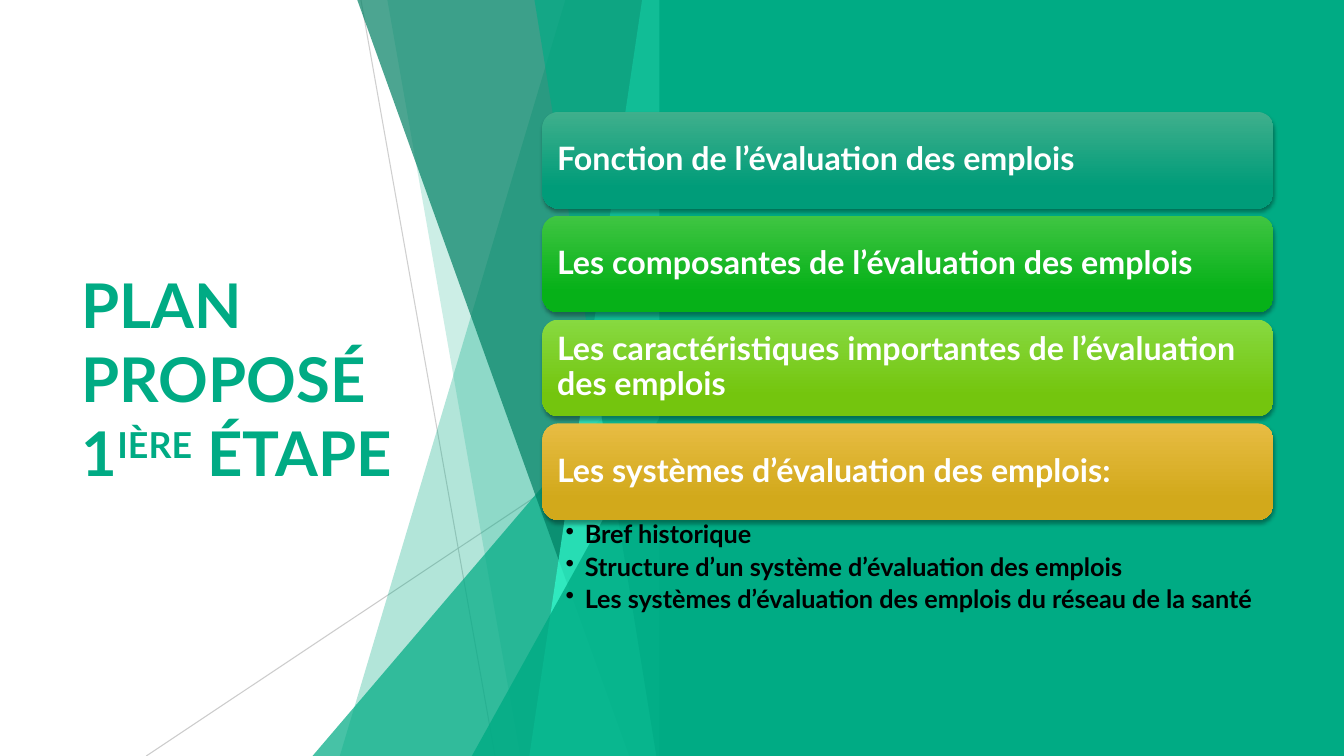
from dataclasses import dataclass

from lxml import etree
from pptx import Presentation
from pptx.dml.color import RGBColor
from pptx.enum.shapes import MSO_CONNECTOR, MSO_SHAPE
from pptx.enum.text import MSO_ANCHOR, MSO_AUTO_SIZE, PP_ALIGN
from pptx.oxml.ns import qn
from pptx.util import Inches, Pt

STRAIGHT = MSO_CONNECTOR.STRAIGHT
TRIANGLE, RECT, ROUND_RECT = (
    MSO_SHAPE.ISOSCELES_TRIANGLE, MSO_SHAPE.RECTANGLE, MSO_SHAPE.ROUNDED_RECTANGLE)
MIDDLE, TOP = MSO_ANCHOR.MIDDLE, MSO_ANCHOR.TOP
LEFT = PP_ALIGN.LEFT
NO_AUTOFIT = MSO_AUTO_SIZE.NONE


@dataclass(frozen=True)
class Theme:
    font: str = "Lato"
    green: str = "00AB84"
    dark_green: str = "008063"
    mint: str = "34FFD1"
    grey: str = "BFBFBF"
    white: str = "FFFFFF"
    black: str = "000000"
    title_size: float = 44
    bar_size: float = 23
    bullet_size: float = 18


@dataclass(frozen=True)
class Ray:
    start: tuple[float, float]
    end: tuple[float, float]
    opacity: int


@dataclass(frozen=True)
class Band:
    """Full-height facet with a slanted left side."""
    top_x: float
    bottom_x: float
    color: str
    opacity: int


@dataclass(frozen=True)
class Corner:
    """Right triangle in the lower corner of the facets."""
    left: float
    top: float
    color: str
    opacity: int


@dataclass(frozen=True)
class Bar:
    text: str
    light: str
    dark: str


THEME = Theme()
SLIDE_W, SLIDE_H = 13.33, 7.5
FACET_TOP, FACET_RIGHT = -0.01, 6.66
PANEL_LEFT = 6.54
BAR_LEFT, BAR_TOP, BAR_W, BAR_H, BAR_PITCH = 5.38, 1.11, 7.25, 0.96, 1.03

RAYS = [Ray((3.58, 0), (4.91, 7.5), 75), Ray((6.66, 4.03), (1.45, 7.5), 80)]
FACETS = [
    Band(5.61, 3.37, THEME.green, 30),
    Band(3.84, 5.16, THEME.green, 20),
    Corner(3.1, 3.33, THEME.green, 72),
    Band(3.54, 6.24, THEME.dark_green, 70),
    Band(6.37, 5.25, THEME.mint, 70),
    Band(5.3, 6.51, THEME.green, 65),
    Corner(4.68, 3.93, THEME.green, 80),
]
BARS = [
    Bar("Fonction de l’évaluation des emplois", "3FAF8C", "009C79"),
    Bar("Les composantes de l’évaluation des emplois", "3FC542", "06B118"),
    Bar("Les caractéristiques importantes de l’évaluation des emplois", "87D940", "74C50E"),
    Bar("Les systèmes d’évaluation des emplois:", "E7BC43", "D2A91B"),
]
BULLETS = [
    "Bref historique",
    "Structure d’un système d’évaluation des emplois",
    "Les systèmes d’évaluation des emplois du réseau de la santé",
]


def rgb(color: str) -> RGBColor:
    return RGBColor.from_string(color)


def add_text(p, text: str, *, size: float, color: str, baseline: int = 0) -> None:
    r = p.add_run()
    r.text = text
    r.font.name, r.font.size, r.font.bold = THEME.font, Pt(size), True
    r.font.color.rgb = rgb(color)
    if baseline:
        r.font._element.set("baseline", str(baseline * 1000))


def set_frame(tf, anchor, left: float, top: float, right: float, bottom: float) -> None:
    tf.word_wrap, tf.auto_size, tf.vertical_anchor = True, NO_AUTOFIT, anchor
    tf.margin_left, tf.margin_top = Inches(left), Inches(top)
    tf.margin_right, tf.margin_bottom = Inches(right), Inches(bottom)


def set_opacity(sp, percent: int) -> None:
    for color in sp._element.spPr.iter(qn("a:srgbClr")):
        etree.SubElement(color, qn("a:alpha"), val=str(percent * 1000))


def paint(sp, color: str) -> None:
    sp.shadow.inherit = False
    sp.fill.solid()
    sp.fill.fore_color.rgb = rgb(color)
    sp.line.fill.background()


def add_title(s) -> None:
    title = s.shapes.title
    title.left, title.top = Inches(0.71), Inches(1.51)
    title.width, title.height = Inches(3.88), Inches(4.48)
    set_frame(title.text_frame, MIDDLE, 0.1, 0.05, 0.1, 0.05)
    p = title.text_frame.paragraphs[0]
    p.alignment = LEFT
    for text, baseline in (("PLAN PROPOSÉ\v1", 0), ("IÈRE", 30), (" ÉTAPE", 0)):
        # A run holds no line break, so each line gets its own run.
        for i, part in enumerate(text.split("\v")):
            if i:
                p.add_line_break()
            add_text(p, part, size=THEME.title_size, color=THEME.green, baseline=baseline)


def add_ray(shapes, ray: Ray) -> None:
    line = shapes.add_connector(STRAIGHT, *map(Inches, ray.start + ray.end))
    line.line.color.rgb = rgb(THEME.grey)
    line.line.width = Pt(0.75)
    set_opacity(line, ray.opacity)
    etree.SubElement(line._element.spPr, qn("a:effectLst"))


def add_facet(shapes, facet: Band | Corner) -> None:
    if isinstance(facet, Band):
        outline = shapes.build_freeform(Inches(facet.top_x), Inches(FACET_TOP))
        corners = [(FACET_RIGHT, FACET_TOP), (FACET_RIGHT, SLIDE_H), (facet.bottom_x, SLIDE_H)]
        outline.add_line_segments([(Inches(x), Inches(y)) for x, y in corners])
        sp = outline.convert_to_shape()
    else:
        sp = shapes.add_shape(
            TRIANGLE, Inches(facet.left), Inches(facet.top),
            Inches(FACET_RIGHT - facet.left), Inches(SLIDE_H - facet.top))
        sp.adjustments[0] = 1
    paint(sp, facet.color)
    set_opacity(sp, facet.opacity)


def add_panel(s) -> None:
    panel = s.shapes.add_shape(
        RECT, Inches(PANEL_LEFT), 0, Inches(SLIDE_W - PANEL_LEFT), Inches(SLIDE_H))
    paint(panel, THEME.green)


def add_shadow(sp) -> None:
    sp.shadow.inherit = False
    effects = sp._element.spPr.find(qn("a:effectLst"))
    shadow = etree.SubElement(
        effects, qn("a:outerShdw"), blurRad=str(Pt(3)), dist=str(Pt(2)),
        dir="5400000", rotWithShape="0")
    color = etree.SubElement(shadow, qn("a:srgbClr"), val=THEME.black)
    etree.SubElement(color, qn("a:alpha"), val="35000")


def add_bar(s, bar: Bar, top: float) -> None:
    sp = s.shapes.add_shape(
        ROUND_RECT, Inches(BAR_LEFT), Inches(top), Inches(BAR_W), Inches(BAR_H))
    sp.fill.gradient()
    sp.fill.gradient_angle = 270
    for stop, color, position in zip(sp.fill.gradient_stops, (bar.light, bar.dark), (0, 0.78)):
        stop.color.rgb, stop.position = rgb(color), position
    sp.line.fill.background()
    add_shadow(sp)
    set_frame(sp.text_frame, MIDDLE, 0.1, 0.1, 0.1, 0.1)
    p = sp.text_frame.paragraphs[0]
    p.alignment, p.line_spacing = LEFT, 0.9
    add_text(p, bar.text, size=THEME.bar_size, color=THEME.white)


def add_bullets(s) -> None:
    box = s.shapes.add_textbox(Inches(BAR_LEFT), Inches(5.15), Inches(BAR_W), Inches(1.25))
    tf = box.text_frame
    set_frame(tf, TOP, 0.23, 0.03, 0.18, 0.03)
    for i, text in enumerate(BULLETS):
        p = tf.add_paragraph() if i else tf.paragraphs[0]
        p.level, p.line_spacing, p.space_after = 1, 0.9, Pt(3.6)
        pPr = p._p.get_or_add_pPr()
        pPr.set("marL", str(Inches(0.19)))
        pPr.set("indent", str(Inches(-0.19)))
        etree.SubElement(pPr, qn("a:buChar"), char="•")
        add_text(p, text, size=THEME.bullet_size, color=THEME.black)


def main() -> None:
    prs = Presentation()
    prs.slide_width, prs.slide_height = Inches(SLIDE_W), Inches(SLIDE_H)
    s = prs.slides.add_slide(prs.slide_layouts[5])
    add_title(s)
    facets = s.shapes.add_group_shape().shapes
    for ray in RAYS:
        add_ray(facets, ray)
    for facet in FACETS:
        add_facet(facets, facet)
    add_panel(s)
    for i, bar in enumerate(BARS):
        add_bar(s, bar, BAR_TOP + i * BAR_PITCH)
    add_bullets(s)
    prs.save("out.pptx")


if __name__ == "__main__":
    main()
